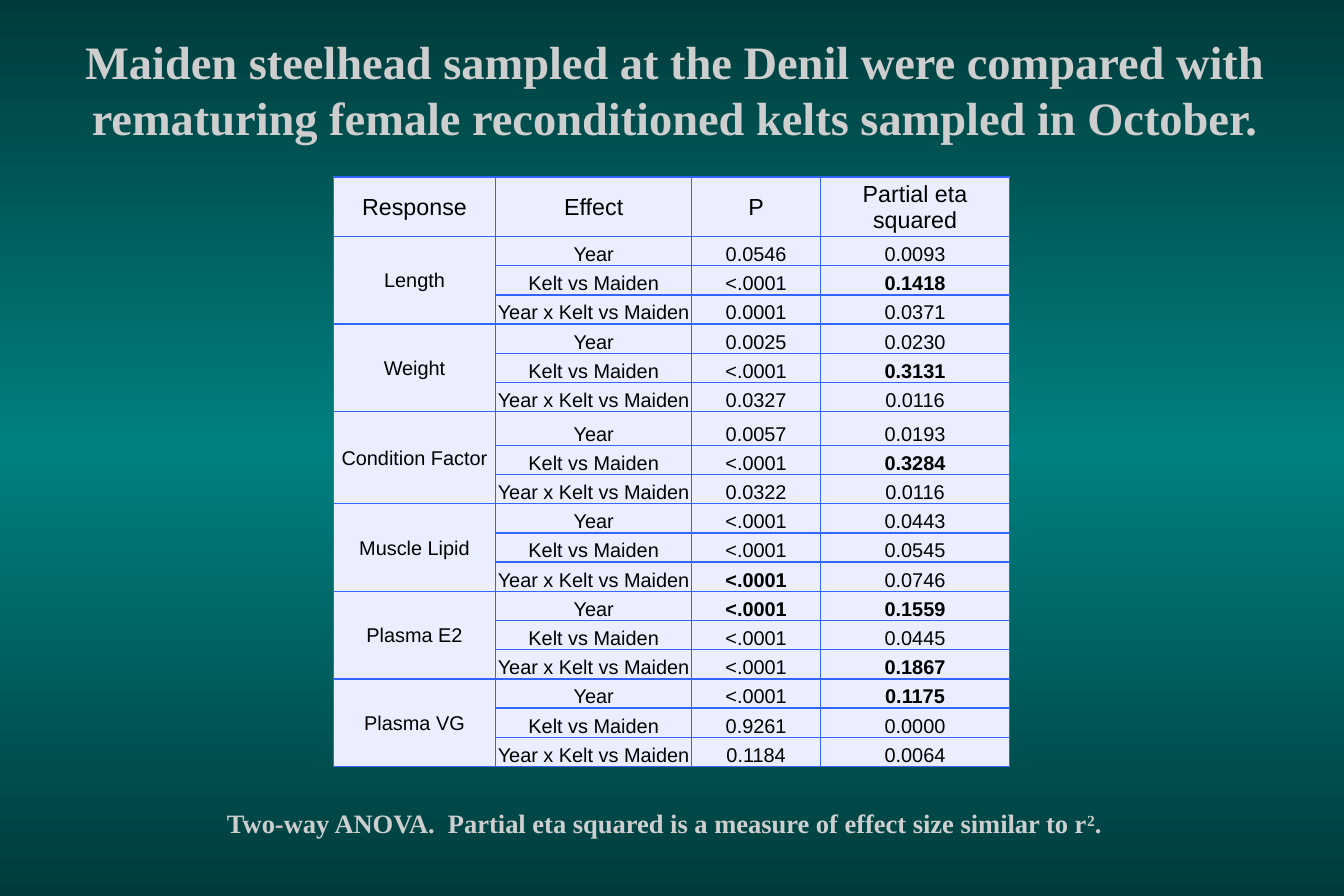
"""Build the steelhead ANOVA slide on a grid of 1125 columns by 750 rows."""
from copy import deepcopy

from lxml.etree import SubElement
from pptx import Presentation
from pptx.dml.color import RGBColor
from pptx.enum.text import MSO_ANCHOR, PP_ALIGN
from pptx.oxml.ns import qn
from pptx.util import Inches, Pt

prs = Presentation()
prs.slide_width, prs.slide_height = Inches(11.25), Inches(7.5)
unit = prs.slide_width // 1125
s = prs.slides.add_slide(prs.slide_layouts[6])


def rgb(value):
    return RGBColor.from_string(value)


def write(p, text, color, **formats):
    p.alignment = PP_ALIGN.CENTER
    r = p.add_run()
    r.text = text
    r.font.color.rgb = rgb(color)
    for name, value in formats.items():
        setattr(r.font, name, value)
    return r


fill = s.background.fill
fill.gradient()
fill.gradient_angle = 90
stop_list = s.element.find(".//" + qn("a:gsLst"))
stop_list.insert(1, deepcopy(stop_list[0]))
for stop, position, color in zip(fill.gradient_stops, (0, 0.5, 1), ("003B3B", "008080", "003B3B")):
    stop.position = position
    stop.color.rgb = rgb(color)

captions = [
    ((4, 23, 1121, 141), 28, [
        "Maiden steelhead sampled at the Denil were compared with "
        "rematuring female reconditioned kelts sampled in October."]),
    ((0, 671, 1112, 37), 16, [
        "Two-way ANOVA.  Partial eta squared is a measure of effect size similar to r", "2", "."]),
]
for box, size, texts in captions:
    tf = s.shapes.add_textbox(*(n * unit for n in box)).text_frame
    tf.word_wrap = True
    for text in texts:
        r = write(tf.paragraphs[0], text, "CECECE", name="Times New Roman", size=Pt(size), bold=True)
        if text == "2":
            r.font._element.set("baseline", "30000")

headers = ["Response", "Effect", "P", "Partial eta squared"]
effects = ["Year", "Kelt vs Maiden", "Year x Kelt vs Maiden"]
results = {
    "Length": [("0.0546", "0.0093"), ("<.0001", "0.1418"), ("0.0001", "0.0371")],
    "Weight": [("0.0025", "0.0230"), ("<.0001", "0.3131"), ("0.0327", "0.0116")],
    "Condition Factor": [("0.0057", "0.0193"), ("<.0001", "0.3284"), ("0.0322", "0.0116")],
    "Muscle Lipid": [("<.0001", "0.0443"), ("<.0001", "0.0545"), ("<.0001", "0.0746")],
    "Plasma E2": [("<.0001", "0.1559"), ("<.0001", "0.0445"), ("<.0001", "0.1867")],
    "Plasma VG": [("<.0001", "0.1175"), ("0.9261", "0.0000"), ("0.1184", "0.0064")],
}
bold_cells = {(2, 3), (5, 3), (8, 3), (12, 2), (13, 2), (13, 3), (15, 3), (16, 3)}

rows = [headers]
for response, values in results.items():
    for i, (effect, pair) in enumerate(zip(effects, values)):
        rows.append(["" if i else response, effect, *pair])

table_height, header_height, tall_row, tall_height = 494, 50, 7, 28
row_height = (table_height - header_height - tall_height) / (len(rows) - 2)
table = s.shapes.add_table(
    len(rows), len(headers), 279 * unit, 148 * unit, 567 * unit, table_height * unit).table
table.first_row = table.horz_banding = False
for column, width in zip(table.columns, (136, 164, 108, 158)):
    column.width = width * unit
for i, row in enumerate(table.rows):
    row.height = int({0: header_height, tall_row: tall_height}.get(i, row_height) * unit)
for top in range(1, len(rows), len(effects)):
    table.cell(top, 0).merge(table.cell(top + len(effects) - 1, 0))

margins = {"margin_left": unit, "margin_right": unit, "margin_top": unit, "margin_bottom": 0}
for i, row in enumerate(rows):
    for j, text in enumerate(row):
        cell = table.cell(i, j)
        middle = i == 0 or j == 0
        anchor = MSO_ANCHOR.MIDDLE if middle else MSO_ANCHOR.BOTTOM
        for name, value in {**margins, "vertical_anchor": anchor}.items():
            setattr(cell, name, value)
        tcPr = cell._tc.get_or_add_tcPr()
        for side in ("lnL", "lnR", "lnT", "lnB"):
            line = SubElement(tcPr, qn("a:" + side), w=str(Pt(1)))
            SubElement(SubElement(line, qn("a:solidFill")), qn("a:srgbClr"), val="3365FB")
        cell.fill.solid()
        cell.fill.fore_color.rgb = rgb("EAEEFF")
        if text:
            write(cell.text_frame.paragraphs[0], text, "000000", name="Arial",
                  size=Pt(12 if i else 14), bold=(i, j) in bold_cells)

prs.save("out.pptx")
